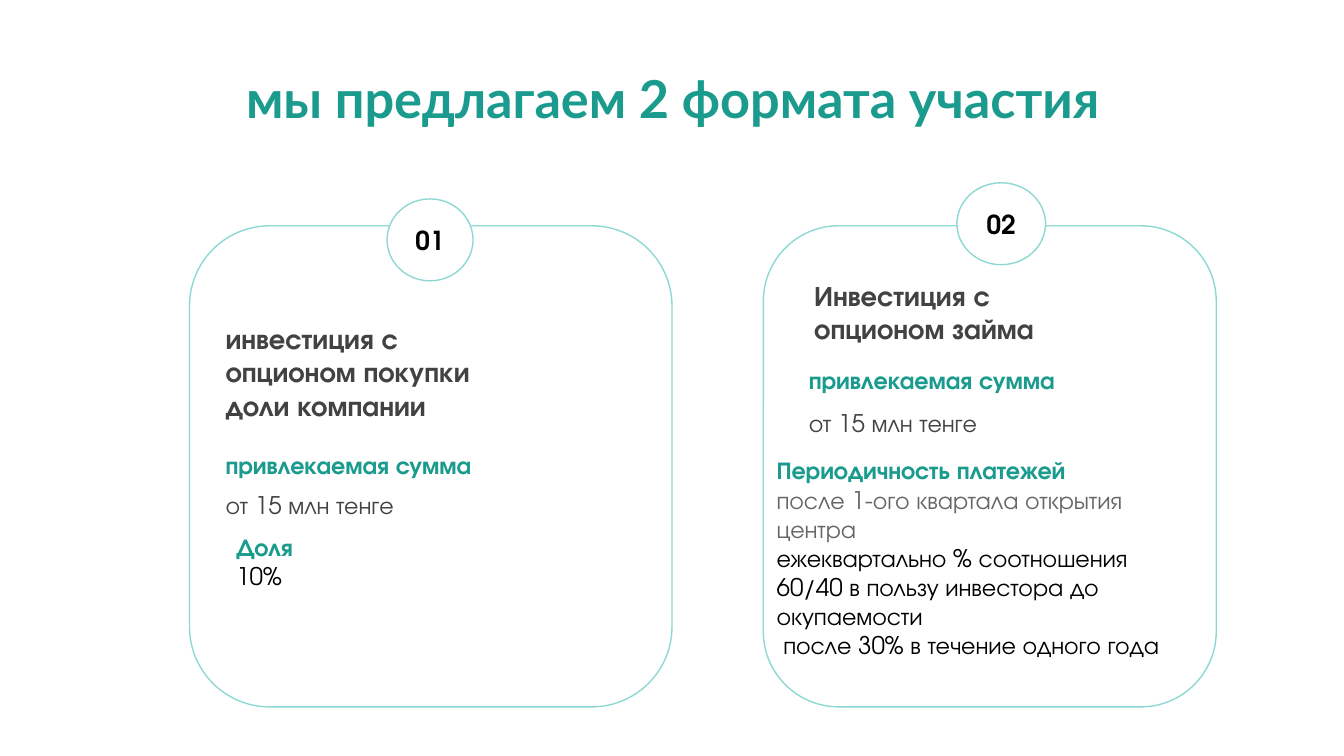
"""Build the slide that compares two investment formats."""
from dataclasses import dataclass

from pptx import Presentation
from pptx.dml.color import RGBColor
from pptx.enum.shapes import MSO_SHAPE as Preset
from pptx.enum.text import MSO_ANCHOR as Anchor, MSO_AUTO_SIZE as AutoSize, PP_ALIGN as Align
from pptx.util import Inches, Pt

TEAL = RGBColor(0x1A, 0x9B, 0x8D)
MINT = RGBColor(0x8D, 0xD8, 0xD3)
CHARCOAL = RGBColor(0x42, 0x42, 0x42)
GREY = RGBColor(0x66, 0x66, 0x66)
BLACK = RGBColor(0, 0, 0)
WHITE = RGBColor(0xFF, 0xFF, 0xFF)
BODY_FONT = "TeX Gyre Adventor"
TITLE_FONT = "Lato"


@dataclass(frozen=True)
class Box:
    left: float
    top: float
    width: float
    height: float

    def lengths(self) -> tuple:
        return tuple(Inches(v) for v in (self.left, self.top, self.width, self.height))


@dataclass(frozen=True)
class Line:
    text: str
    color: RGBColor
    bold: bool = False
    size: int = 13


@dataclass(frozen=True)
class Note:
    box: Box
    lines: tuple[Line, ...]


@dataclass(frozen=True)
class Offer:
    number: str
    card: Box
    outline: Preset
    badge: Box
    notes: tuple[Note, ...]


AMOUNT_LABEL = Line("привлекаемая сумма", TEAL, True)
AMOUNT = Line("от 15 млн тенге", CHARCOAL)

OFFERS = (
    Offer("01", Box(1.41, 1.68, 3.59, 3.58), Preset.FLOWCHART_ALTERNATE_PROCESS,
          Box(2.88, 1.48, 0.64, 0.61), (
        Note(Box(1.58, 2.29, 2.33, 1.2),
             (Line("инвестиция с опционом покупки доли компании", CHARCOAL, True, 15),)),
        Note(Box(1.58, 3.25, 2.11, 0.42), (AMOUNT_LABEL,)),
        Note(Box(1.58, 3.55, 1.69, 0.42), (AMOUNT,)),
        Note(Box(1.66, 3.86, 0.77, 0.64), (Line("Доля", TEAL, True), Line("10%", BLACK))),
    )),
    Offer("02", Box(5.68, 1.68, 3.37, 3.58), Preset.ROUNDED_RECTANGLE,
          Box(7.12, 1.36, 0.66, 0.61), (
        Note(Box(5.96, 1.97, 2.03, 0.38),
             (Line("Инвестиция с опционом займа", CHARCOAL, True, 15),)),
        Note(Box(5.92, 2.62, 2.11, 0.42), (AMOUNT_LABEL,)),
        Note(Box(5.92, 2.94, 1.69, 0.42), (AMOUNT,)),
        Note(Box(5.68, 3.29, 3.12, 1.95), (
            Line("Периодичность платежей", TEAL, True),
            Line("после 1-ого квартала открытия центра", GREY),
            Line("ежеквартально % соотношения 60/40 в пользу инвестора до окупаемости", BLACK),
            Line(" после 30% в течение одного года", BLACK),
        )),
    )),
)


def write(frame, lines: tuple[Line, ...], align: Align = Align.LEFT,
          anchor: Anchor = Anchor.TOP, font: str = BODY_FONT) -> None:
    frame.text = "\n".join(line.text for line in lines)
    frame.word_wrap = True
    frame.auto_size = AutoSize.NONE
    frame.vertical_anchor = anchor
    frame.margin_left = frame.margin_right = Inches(0.1)
    frame.margin_top = frame.margin_bottom = Inches(0.1)
    for paragraph, line in zip(frame.paragraphs, lines):
        paragraph.alignment = align
        for run in paragraph.runs:
            run.font.name = font
            run.font.size = Pt(line.size)
            run.font.bold = line.bold
            run.font.color.rgb = line.color


def draw_outline(slide, preset: Preset, box: Box):
    outline = slide.shapes.add_shape(preset, *box.lengths())
    outline.shadow.inherit = False
    outline.fill.solid()
    outline.fill.fore_color.rgb = WHITE
    outline.line.color.rgb = MINT
    outline.line.width = Pt(0.75)
    return outline


def draw_offer(slide, offer: Offer) -> None:
    draw_outline(slide, offer.outline, offer.card)
    badge = draw_outline(slide, Preset.OVAL, offer.badge)
    write(badge.text_frame, (Line(offer.number, BLACK, True, 14),), Align.CENTER, Anchor.MIDDLE)
    for note in offer.notes:
        caption = slide.shapes.add_textbox(*note.box.lengths())
        write(caption.text_frame, note.lines)


def draw_title(slide, text: str, box: Box) -> None:
    heading = slide.shapes.title
    heading.left, heading.top, heading.width, heading.height = box.lengths()
    write(heading.text_frame, (Line(text, TEAL, True, 28),), Align.CENTER, font=TITLE_FONT)


def main() -> None:
    deck = Presentation()
    deck.slide_width = Inches(10)
    deck.slide_height = Inches(10 * 9 / 16)
    slide = deck.slides.add_slide(deck.slide_layouts[5])
    draw_title(slide, "мы предлагаем 2 формата участия", Box(1.16, 0.39, 7.69, 1.09))
    for offer in OFFERS:
        draw_offer(slide, offer)
    deck.save("out.pptx")


if __name__ == "__main__":
    main()
